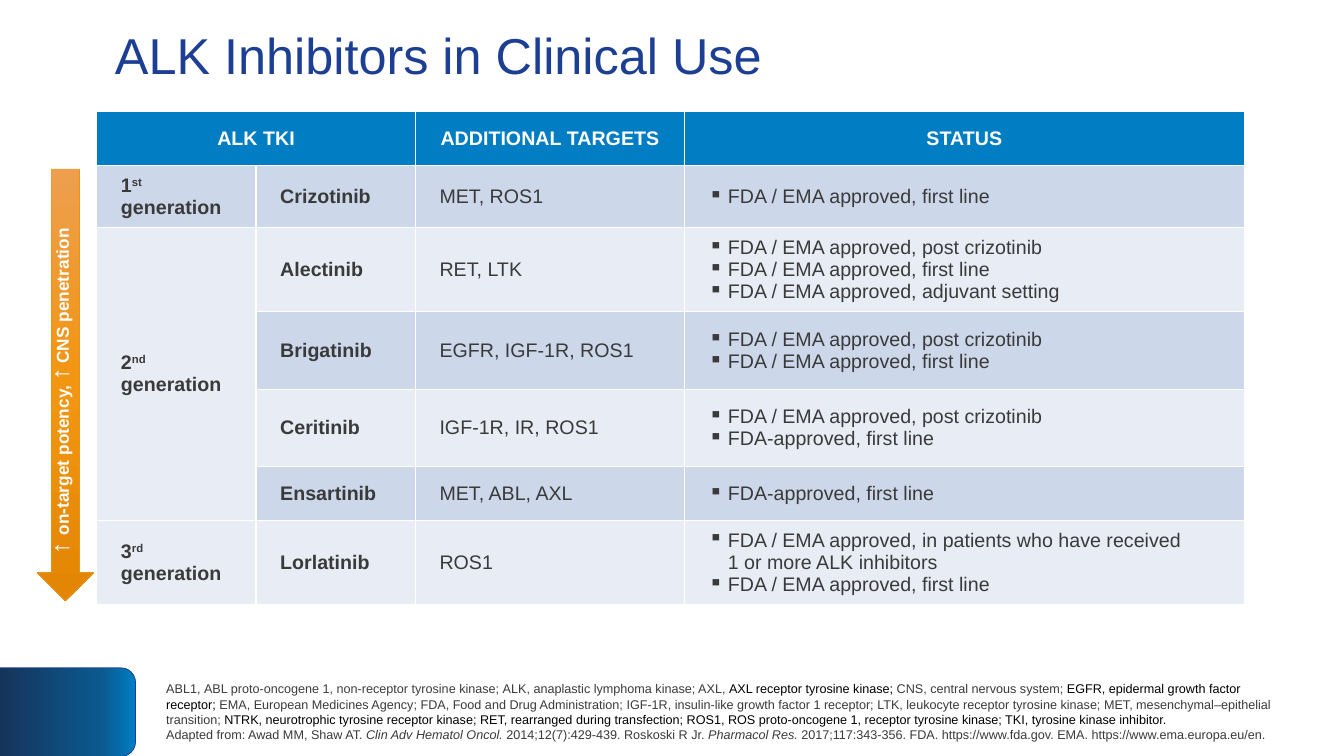
"""Build the slide on ALK inhibitors in clinical use."""
from dataclasses import dataclass

from lxml.etree import SubElement
from pptx import Presentation
from pptx.dml.color import RGBColor
from pptx.enum.shapes import MSO_SHAPE as Preset
from pptx.enum.text import MSO_ANCHOR as Anchor, MSO_AUTO_SIZE as AutoSize, PP_ALIGN as Align
from pptx.oxml.ns import qn
from pptx.shapes.autoshape import Shape
from pptx.table import _Cell as Cell
from pptx.text.text import TextFrame, _Paragraph as Paragraph
from pptx.util import Emu, Pt

EMU_PER_PX = 9144
COLORS = {
    "white": "FFFFFF", "black": "000000", "text": "3A3A3A", "soft": "3D3D3D",
    "title": "1C3F93", "header": "007DC3", "dark_band": "CCD7E9", "light_band": "E7ECF5",
    "arrow_line": "E8931A", "arrow_top": "ED9F4E", "arrow_mid": "F29510",
    "arrow_tip": "E38603", "corner_mid": "0B598F", "corner_end": "15345A",
}


@dataclass(frozen=True)
class Drug:
    name: str
    targets: str
    status: tuple[str, ...]
    height: int


@dataclass(frozen=True)
class Generation:
    number: str
    suffix: str
    drugs: tuple[Drug, ...]


@dataclass(frozen=True)
class Block:
    preset: Preset
    box: tuple[int, int, int, int]
    stops: tuple[tuple[int, str], ...]
    line: str
    rotation: int = 0


@dataclass(frozen=True)
class Note:
    text: str
    color: str = "text"
    italic: bool = False


POST = "FDA / EMA approved, post crizotinib"
FIRST = "FDA / EMA approved, first line"
FDA_FIRST = "FDA-approved, first line"
HEADER_HEIGHT = 53
COLUMN_WIDTHS = (158, 158, 267, 555)
GENERATIONS = (
    Generation("1", "st", (Drug("Crizotinib", "MET, ROS1", (FIRST,), 60),)),
    Generation("2", "nd", (
        Drug("Alectinib", "RET, LTK",
             (POST, FIRST, "FDA / EMA approved, adjuvant setting"), 83),
        Drug("Brigatinib", "EGFR, IGF-1R, ROS1", (POST, FIRST), 77),
        Drug("Ceritinib", "IGF-1R, IR, ROS1", (POST, FDA_FIRST), 77),
        Drug("Ensartinib", "MET, ABL, AXL", (FDA_FIRST,), 53),
    )),
    Generation("3", "rd", (
        Drug("Lorlatinib", "ROS1",
             ("FDA / EMA approved, in patients who have received\n1 or more ALK inhibitors",
              FIRST), 83),
    )),
)
CORNER = Block(Preset.ROUND_2_SAME_RECTANGLE, (23, 639, 88, 135),
               ((0, "header"), (25, "corner_mid"), (100, "corner_end")), "title", 90)
POTENCY_ARROW = Block(Preset.DOWN_ARROW, (37, 168, 56, 428),
                      ((0, "arrow_top"), (50, "arrow_mid"), (100, "arrow_tip")), "arrow_line")
POTENCY_LABEL = (("↑ ", 17.6), ("on-target potency, ", 12.3), ("↑", 17.6),
                 (" CNS penetration", 12.3))
FOOTNOTE = (
    Note("ABL1, "),
    Note("ABL proto-oncogene 1, non-receptor tyrosine kinase; ", "soft"),
    Note("ALK, anaplastic lymphoma kinase; AXL, "),
    Note("AXL receptor tyrosine kinase; ", "black"),
    Note("CNS, central nervous system; "),
    Note("EGFR, epidermal growth factor receptor; ", "black"),
    Note("EMA, European Medicines Agency; FDA, Food and Drug Administration; IGF-1R, "
         "insulin-like growth factor 1 receptor; LTK, leukocyte receptor tyrosine kinase; "
         "MET, mesenchymal–epithelial transition; "),
    Note("NTRK, neurotrophic tyrosine receptor kinase; RET, rearranged during transfection; "
         "ROS1, ROS proto-oncogene 1, receptor tyrosine kinase; TKI, tyrosine kinase "
         "inhibitor.\n", "black"),
    Note("Adapted from: Awad MM, Shaw AT. "),
    Note("Clin Adv Hematol Oncol. ", italic=True),
    Note("2014;12(7):429-439. Roskoski R Jr. "),
    Note("Pharmacol Res. ", italic=True),
    Note("2017;117:343-356. FDA. https://www.fda.gov. EMA. https://www.ema.europa.eu/en."),
)


def px(*lengths: int) -> list[Emu]:
    return [Emu(length * EMU_PER_PX) for length in lengths]


def rgb(color: str) -> RGBColor:
    return RGBColor.from_string(COLORS[color])


def write(paragraph: Paragraph, text: str, *, size: float = 14, color: str = "text",
          bold: bool = False, italic: bool = False, raised: bool = False) -> None:
    for index, line in enumerate(text.split("\n")):
        if index:
            paragraph.add_line_break()
        if line:
            run = paragraph.add_run()
            run.text = line
            font = run.font
            font.name, font.size, font.bold, font.italic = "Arial", Pt(size), bold, italic
            font.color.rgb = rgb(color)
            if raised:
                run._r.get_or_add_rPr().set("baseline", "30000")


def add_solid(parent, color: str) -> None:
    SubElement(SubElement(parent, qn("a:solidFill")), qn("a:srgbClr"), val=COLORS[color])


def add_block(shapes, block: Block) -> Shape:
    shape = shapes.add_shape(block.preset, *px(*block.box))
    shape.rotation = block.rotation
    shape.shadow.inherit = False
    shape.fill.gradient()
    gradient = shape._element.spPr.find(qn("a:gradFill"))
    gradient.set("rotWithShape", "1")
    stop_list = gradient.find(qn("a:gsLst"))
    for stop in list(stop_list):
        stop_list.remove(stop)
    for position, color in block.stops:
        stop = SubElement(stop_list, qn("a:gs"), pos=str(position * 1000))
        SubElement(stop, qn("a:srgbClr"), val=COLORS[color])
    shape.fill.gradient_angle = 270
    shape.line.color.rgb = rgb(block.line)
    shape.line.width = Pt(0.5)
    return shape


def style_cell(cell: Cell, fill: str) -> Paragraph:
    cell.vertical_anchor = Anchor.MIDDLE
    cell.margin_left, cell.margin_top, cell.margin_right, cell.margin_bottom = px(24, 9, 24, 9)
    for side in ("lnL", "lnR", "lnT", "lnB"):
        border = SubElement(cell._tc.get_or_add_tcPr(), qn(f"a:{side}"), w=str(Pt(1)))
        add_solid(border, "white")
    cell.fill.solid()
    cell.fill.fore_color.rgb = rgb(fill)
    return cell.text_frame.paragraphs[0]


def write_bullets(frame: TextFrame, items: tuple[str, ...]) -> None:
    indent = px(19)[0]
    for index, item in enumerate(items):
        paragraph = frame.add_paragraph() if index else frame.paragraphs[0]
        properties = paragraph._p.get_or_add_pPr()
        properties.set("marL", str(indent))
        properties.set("indent", str(-indent))
        SubElement(properties, qn("a:buChar"), char="▪")
        write(paragraph, item)


def add_inhibitor_table(shapes) -> None:
    drugs = [drug for generation in GENERATIONS for drug in generation.drugs]
    heights = [HEADER_HEIGHT, *(drug.height for drug in drugs)]
    table = shapes.add_table(len(heights), len(COLUMN_WIDTHS),
                             *px(96, 111, sum(COLUMN_WIDTHS), sum(heights))).table
    for column, width in zip(table.columns, px(*COLUMN_WIDTHS)):
        column.width = width
    for row, height in zip(table.rows, px(*heights)):
        row.height = height
    for cell, heading in zip(table.rows[0].cells,
                             ("ALK TKI", "", "ADDITIONAL TARGETS", "STATUS")):
        paragraph = style_cell(cell, "header")
        paragraph.alignment = Align.CENTER
        write(paragraph, heading, color="white", bold=True)
    table.cell(0, 0).merge(table.cell(0, 1))
    for index, drug in enumerate(drugs, 1):
        band = "dark_band" if index % 2 else "light_band"
        _, name, targets, _ = [style_cell(cell, band) for cell in table.rows[index].cells]
        write(name, drug.name, bold=True)
        write(targets, drug.targets)
        write_bullets(table.cell(index, 3).text_frame, drug.status)
    first = 1
    for generation in GENERATIONS:
        label = table.cell(first, 0)
        last = first + len(generation.drugs) - 1
        if last > first:
            label.merge(table.cell(last, 0))
        paragraph = label.text_frame.paragraphs[0]
        write(paragraph, generation.number, bold=True)
        write(paragraph, generation.suffix, bold=True, raised=True)
        write(paragraph, " generation", bold=True)
        first = last + 1


def main() -> None:
    deck = Presentation()
    deck.slide_width, deck.slide_height = px(1333, 750)
    slide = deck.slides.add_slide(deck.slide_layouts[5])
    shapes = slide.shapes

    title = shapes.title
    title.left, title.top, title.width, title.height = px(92, 18, 1150, 80)
    heading = title.text_frame
    heading.vertical_anchor = Anchor.MIDDLE
    heading.margin_left = px(22)[0]
    heading.paragraphs[0].alignment = Align.LEFT
    heading.paragraphs[0].line_spacing = 0.9
    write(heading.paragraphs[0], "ALK Inhibitors in Clinical Use", size=36, color="title")

    add_block(shapes, CORNER)
    add_inhibitor_table(shapes)

    potency = shapes.add_group_shape().shapes
    add_block(potency, POTENCY_ARROW)
    label = potency.add_textbox(*px(39, 224, 50, 336)).text_frame
    label.word_wrap = False
    label.auto_size = AutoSize.SHAPE_TO_FIT_TEXT
    label._txBody.bodyPr.set("vert", "vert270")
    for text, size in POTENCY_LABEL:
        write(label.paragraphs[0], text, size=size, color="white", bold=True)

    footnote = shapes.add_textbox(*px(155, 662, 1118, 88)).text_frame
    footnote.word_wrap = True
    footnote.vertical_anchor = Anchor.MIDDLE
    for note in FOOTNOTE:
        write(footnote.paragraphs[0], note.text, size=9, color=note.color, italic=note.italic)

    deck.save("out.pptx")


if __name__ == "__main__":
    main()
